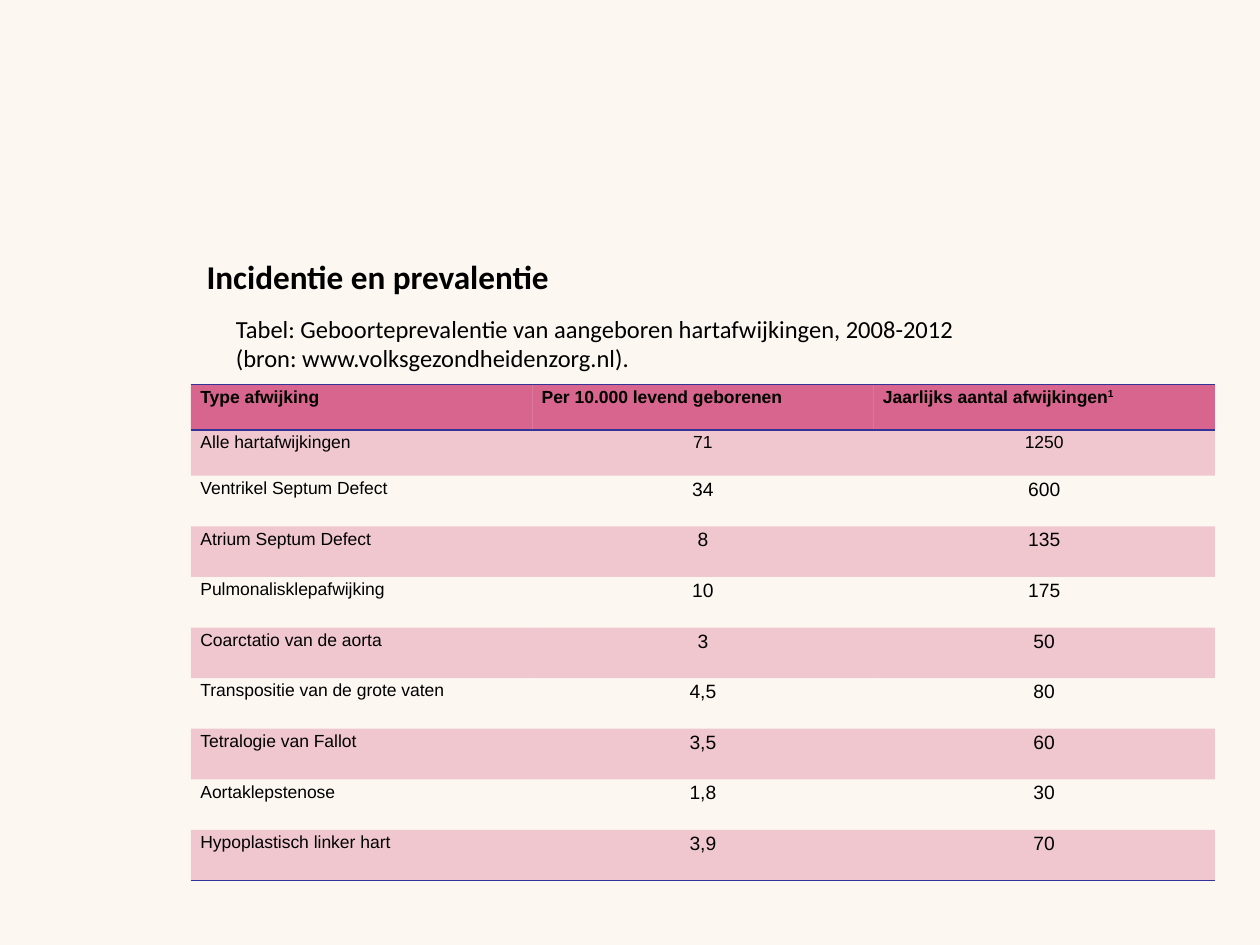
from lxml import etree
from pptx import Presentation
from pptx.dml.color import RGBColor
from pptx.enum import text
from pptx.oxml import ns
from pptx.util import Cm, Pt

COLORS = {"background": "FCF8F1", "text": "000000", "band": "C1034B", "rule": "333399"}
PLAIN_TABLE_STYLE = "{2D5ABB26-0587-4C30-8999-92F81FD0307C}"

TITLE_FORMAT = {"name": "Calibri", "size": Pt(19), "bold": True}
CAPTION_FORMAT = {"name": "Calibri", "size": Pt(14), "bold": False}
HEADER_FORMAT = {"name": "Arial", "size": Pt(10), "bold": True}
LABEL_FORMAT = {"name": "Arial", "size": Pt(10), "bold": False}
NUMBER_FORMAT = {"name": "Arial", "size": Pt(11), "bold": False}

CAPTION = [
    "Tabel: Geboorteprevalentie van aangeboren hartafwijkingen, 2008-2012",
    "(bron: www.volksgezondheidenzorg.nl).",
]
HEADINGS = ["Type afwijking", "Per 10.000 levend geborenen", "Jaarlijks aantal afwijkingen"]
DEFECTS = [
    ("Alle hartafwijkingen", "71", "1250"),
    ("Ventrikel Septum Defect", "34", "600"),
    ("Atrium Septum Defect", "8", "135"),
    ("Pulmonalisklepafwijking", "10", "175"),
    ("Coarctatio van de aorta", "3", "50"),
    ("Transpositie van de grote vaten", "4,5", "80"),
    ("Tetralogie van Fallot", "3,5", "60"),
    ("Aortaklepstenose", "1,8", "30"),
    ("Hypoplastisch linker hart", "3,9", "70"),
]


def color(key):
    return RGBColor.from_string(COLORS[key])


def set_attributes(target, values):
    for attribute, value in values.items():
        setattr(target, attribute, value)


def format_font(font, values):
    set_attributes(font, values)
    font.color.rgb = color("text")


def place_text(placeholder, box, lines, font_format, anchor):
    """Move a placeholder to box and fill it with unbulleted lines."""
    left, top, width, height = box
    set_attributes(placeholder, {"left": left, "top": top, "width": width, "height": height})
    frame = placeholder.text_frame
    set_attributes(frame, {"word_wrap": True, "auto_size": text.MSO_AUTO_SIZE.NONE,
                           "vertical_anchor": anchor})
    frame.text = "\n".join(lines)
    for paragraph in frame.paragraphs:
        properties = paragraph._p.get_or_add_pPr()
        properties.set("marL", "0")
        properties.set("indent", "0")
        etree.SubElement(properties, ns.qn("a:buNone"))
        set_attributes(paragraph, {"alignment": text.PP_ALIGN.LEFT, "space_before": Pt(0)})
        format_font(paragraph.runs[0].font, font_format)


def add_rule(cell, side):
    line = etree.SubElement(cell._tc.get_or_add_tcPr(), ns.qn(f"a:{side}"), w=str(Pt(1)))
    fill = etree.SubElement(line, ns.qn("a:solidFill"))
    etree.SubElement(fill, ns.qn("a:srgbClr"), val=COLORS["rule"])


def fill_band(cell, percent):
    cell.fill.solid()
    cell.fill.fore_color.rgb = color("band")
    tint = cell._tc.tcPr.find(ns.qn("a:solidFill")).find(ns.qn("a:srgbClr"))
    etree.SubElement(tint, ns.qn("a:alpha"), val=str(percent * 1000))


def write_cell(cell, content, font_format, alignment):
    set_attributes(cell, {"margin_left": Cm(0.19), "margin_right": Cm(0.19),
                          "margin_top": 0, "margin_bottom": 0})
    paragraph = cell.text_frame.paragraphs[0]
    set_attributes(paragraph, {"alignment": alignment, "line_spacing": 1.15})
    run = paragraph.add_run()
    run.text = content
    format_font(run.font, font_format)
    return paragraph


def add_prevalence_table(slide, box):
    left, top, width, height = box
    rows = [HEADINGS, *DEFECTS]
    table = slide.shapes.add_table(len(rows), len(HEADINGS), left, top, width, height).table
    table._tbl.tblPr.find(ns.qn("a:tableStyleId")).text = PLAIN_TABLE_STYLE

    for r, values in enumerate(rows):
        # The header and the totals row are slightly lower than the rest
        table.rows[r].height = Cm(0.92) if r < 2 else Cm(1.02)
        for c, content in enumerate(values):
            cell = table.cell(r, c)
            if r == 0:
                font_format = HEADER_FORMAT
            else:
                font_format = LABEL_FORMAT if c == 0 or r == 1 else NUMBER_FORMAT
            centred = r > 0 and c > 0
            write_cell(cell, content, font_format,
                       text.PP_ALIGN.CENTER if centred else text.PP_ALIGN.LEFT)

            # Rules around the header and below the last row
            if r == 0:
                add_rule(cell, "lnT")
            if r in (0, len(rows) - 1):
                add_rule(cell, "lnB")

            # Bands on the header and on every odd row
            if r == 0:
                fill_band(cell, 60)
            elif r % 2:
                fill_band(cell, 20)
            else:
                cell.fill.background()

    # Footnote mark in the last heading
    mark = table.cell(0, len(HEADINGS) - 1).text_frame.paragraphs[0].add_run()
    mark.text = "1"
    format_font(mark.font, HEADER_FORMAT)
    mark._r.get_or_add_rPr().set("baseline", "30000")


def main():
    deck = Presentation()
    set_attributes(deck, {"slide_width": Cm(25.4), "slide_height": Cm(19.05)})
    slide = deck.slides.add_slide(deck.slide_layouts[1])
    slide.background.fill.solid()
    slide.background.fill.fore_color.rgb = color("background")

    # Title and table caption
    place_text(slide.shapes.title, (Cm(3.91), Cm(5), Cm(19.84), Cm(1.14)),
               ["Incidentie en prevalentie"], TITLE_FORMAT, text.MSO_ANCHOR.MIDDLE)
    place_text(slide.placeholders[1], (Cm(4.5), Cm(6.2), Cm(19.63), Cm(1.45)),
               CAPTION, CAPTION_FORMAT, text.MSO_ANCHOR.TOP)

    # Prevalence table
    add_prevalence_table(slide, (Cm(3.85), Cm(7.75), Cm(20.64), Cm(10)))
    deck.save("out.pptx")


if __name__ == "__main__":
    main()
